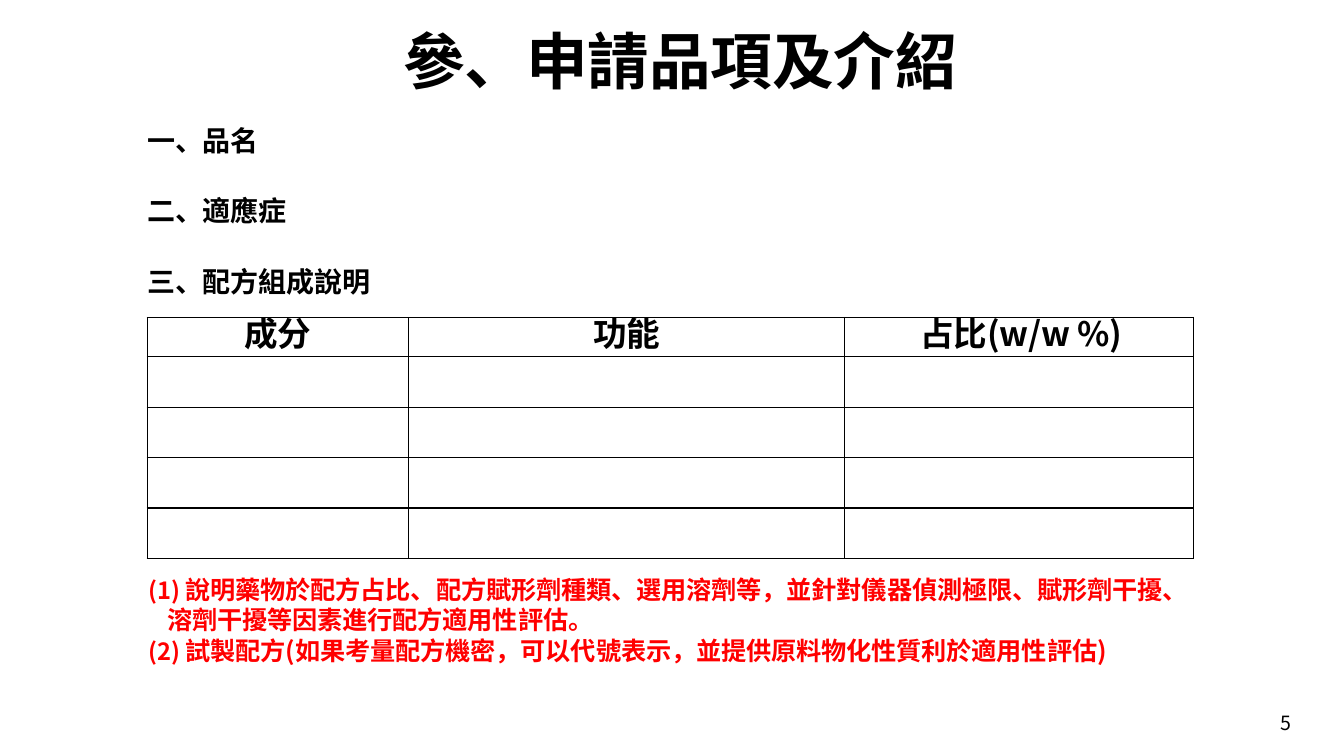
from lxml.etree import SubElement
from pptx import Presentation
from pptx.dml.color import RGBColor
from pptx.enum.text import MSO_ANCHOR, PP_ALIGN
from pptx.oxml import parse_xml
from pptx.oxml.ns import nsdecls, qn
from pptx.util import Inches, Pt

WIDE, HIGH = Inches(13.33), Inches(7.5)
FACE = "Noto Sans CJK SC"
BLACK, RED = "000000", "FF0000"
LEFT = 10.95


def across(share):
    """Turn a percentage of the slide width into a length."""
    return round(WIDE * share / 100)


def down(share):
    """Turn a percentage of the slide height into a length."""
    return round(HIGH * share / 100)


def paint(font, tone):
    """Give a font a solid colour."""
    font.fill.solid()
    font.fill.fore_color.rgb = RGBColor.from_string(tone)


def style(para, size, lead, tone=BLACK, bold=True, track=-10):
    """Set the font, tracking and line height of a paragraph."""
    para.line_spacing = Pt(lead)
    font = para.font
    font.size, font.bold = Pt(size), bold
    paint(font, tone)
    font.name = FACE
    props = para._p.pPr.find(qn("a:defRPr"))
    props.set("spc", str(track))
    SubElement(props, qn("a:ea"), typeface=FACE)


def place(shape, left, top, width, height):
    """Put a shape at shares of the slide."""
    shape.left, shape.top = across(left), down(top)
    shape.width, shape.height = across(width), down(height)


def fill(shape, lines, inset, gap=0, number=False, **look):
    """Write styled paragraphs into a shape."""
    frame = shape.text_frame
    frame.word_wrap = True
    frame.vertical_anchor = MSO_ANCHOR.TOP
    frame.margin_left = frame.margin_right = frame.margin_bottom = 0
    frame.margin_top = Inches(inset)
    frame.text = "\n".join(lines)
    for rank, para in enumerate(frame.paragraphs):
        para.alignment = PP_ALIGN.LEFT
        para.space_before = Pt(gap if rank else 0)
        if number:
            count(para)
        style(para, **look)


def count(para):
    """Number a paragraph with a hanging indent."""
    props = para._p.get_or_add_pPr()
    props.set("marL", str(Inches(0.2)))
    props.set("indent", str(Inches(-0.19)))
    SubElement(props, qn("a:buSzPct"), val="94000")
    SubElement(props, qn("a:buFont"), typeface=FACE)
    SubElement(props, qn("a:buAutoNum"), type="arabicParenBoth")
    tabs = SubElement(props, qn("a:tabLst"))
    for stop in (0.2, 0.32):
        SubElement(tabs, qn("a:tab"), pos=str(Inches(stop)), algn="l")


def frame_cell(cell):
    """Clear the fill and margins of a cell and rule its edges."""
    cell.margin_left = cell.margin_right = 0
    cell.margin_top = cell.margin_bottom = 0
    cell.fill.background()
    props = cell._tc.get_or_add_tcPr()
    for rank, side in enumerate("LRTB"):
        props.insert(rank, parse_xml(
            f'<a:ln{side} {nsdecls("a")} w="{Pt(1)}"><a:solidFill>'
            f'<a:srgbClr val="{BLACK}"/></a:solidFill></a:ln{side}>'))


def add_grid(slide, heads, widths, rows):
    """Add the formula table with its header and empty rows."""
    first, rest = Inches(0.39), Inches(0.5)
    shape = slide.shapes.add_table(
        rows + 1, len(heads), across(LEFT), down(42),
        Inches(sum(widths)), first + rows * rest)
    table = shape.table
    for col, width in zip(table.columns, widths):
        col.width = Inches(width)
    for rank, row in enumerate(table.rows):
        row.height = rest if rank else first
    for cell in table.iter_cells():
        frame_cell(cell)
    for rank, head in enumerate(heads):
        cell = table.cell(0, rank)
        cell.text = head
        para = cell.text_frame.paragraphs[0]
        para.alignment = PP_ALIGN.CENTER
        style(para, 24, 27.8, track=-20)
    para.alignment = PP_ALIGN.LEFT
    para._p.pPr.set("marL", str(Inches(0.75)))


def add_text(slide, spot, lines, **look):
    """Add a text box at a spot."""
    box = slide.shapes.add_textbox(0, 0, 0, 0)
    place(box, *spot)
    fill(box, lines, **look)


def main():
    """Build the slide and save it."""
    deck = Presentation()
    deck.slide_width, deck.slide_height = WIDE, HIGH
    slide = deck.slides.add_slide(deck.slide_layouts[5])
    title = slide.shapes.title
    place(title, 30, 2.27, 45.54, 10)
    fill(title, ["參、申請品項及介紹"], 0.07, size=44, lead=52)
    add_text(slide, (LEFT, 16, 23.5, 23.3),
             ["一、品名", "二、適應症", "三、配方組成說明"],
             inset=0.03, gap=26, size=20, lead=24)
    add_grid(slide, ["成分", "功能", "占比(w/w %)"], [2.59, 4.33, 3.46], 4)
    add_text(slide, (LEFT, 75.6, 77.5, 12.5), [
        " 說明藥物於配方占比、配方賦形劑種類、選用溶劑等，並針對儀器偵測極限、"
        "賦形劑干擾、溶劑干擾等因素進行配方適用性評估。",
        " 試製配方(如果考量配方機密，可以代號表示，並提供原料物化性質利於適用性評估)",
    ], inset=0.03, gap=1, number=True, size=18, lead=21.4, tone=RED)
    add_text(slide, (95.27, 93.47, 2.25, 3.87), ["5"],
             inset=0.04, size=14, lead=17, bold=False, track=-20)
    deck.save("out.pptx")


if __name__ == "__main__":
    main()
